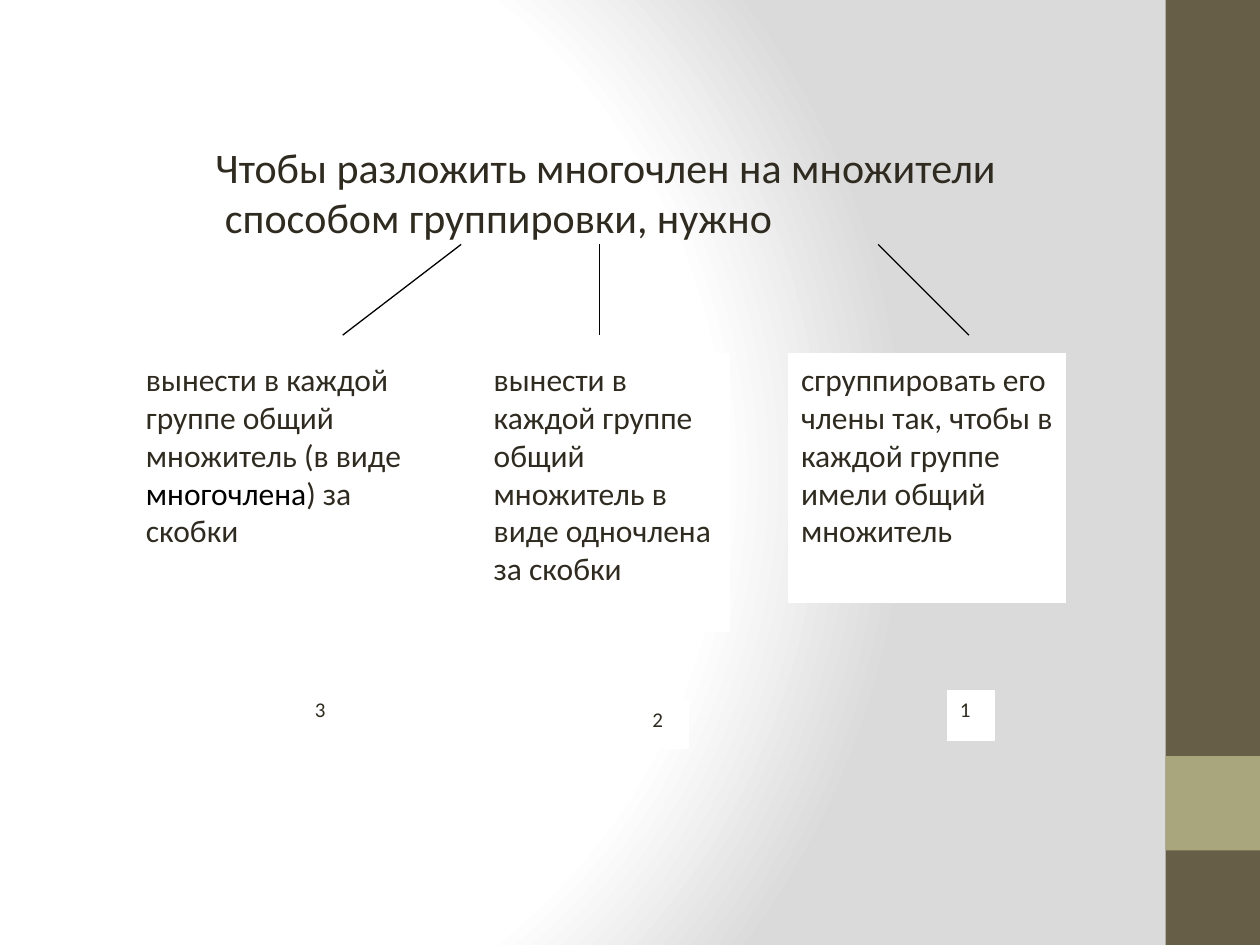
from pptx import Presentation
from pptx.dml.color import RGBColor
from pptx.enum.shapes import MSO_CONNECTOR, MSO_SHAPE
from pptx.enum.text import MSO_ANCHOR, MSO_AUTO_SIZE, PP_ALIGN
from pptx.oxml import parse_xml
from pptx.oxml.ns import nsdecls
from pptx.oxml.xmlchemy import OxmlElement
from pptx.util import Inches, Pt

INK, BLACK, WHITE = "2F2B20", "000000", "FFFFFF"
BROWN, OLIVE, GREY = "675E47", "A9A57C", "DADADA"
BAND_LEFT, BAND_WIDTH = 9.25, 0.75
STEP_TOP = 2.81
BRANCH_TOP, BRANCH_BOTTOM = 1.94, 2.66

HEADING = ["Чтобы разложить многочлен на множители",
           " способом группировки, нужно"]

# Each step: box (left, width, height), number box (left, top, width, height),
# number, text pieces with their colours.
STEPS = [
    ((1.06, 2.28, 2.28), (2.4, 5.48, 0.38, 0.38), "3",
     [("вынести в каждой группе общий множитель (в виде ", INK),
      ("многочлена", BLACK), (") за скобки", INK)]),
    ((3.82, 1.97, 2.2), (5.08, 5.56, 0.38, 0.38), "2",
     [("вынести в каждой группе общий множитель в виде одночлена за скобки", INK)]),
    ((6.26, 2.2, 1.97), (7.52, 5.48, 0.37, 0.4), "1",
     [("сгруппировать его члены так, чтобы в каждой группе имели общий множитель", INK)]),
]
BRANCHES = [(3.66, 2.72), (4.76, 4.76), (6.97, 7.69)]


def color(hex_code):
    return RGBColor.from_string(hex_code)


def style_run(run, size, ink=INK):
    run.font.name = "Calibri"
    run.font.size = Pt(size)
    run.font.color.rgb = color(ink)


def set_background(slide):
    """White glow from the left fading to grey on the right."""
    stops = "".join(
        f'<a:gs pos="{share * 1000}"><a:srgbClr val="{tone}"/></a:gs>'
        for share, tone in [(0, WHITE), (75, WHITE), (100, GREY)])
    background = parse_xml(
        f'<p:bg {nsdecls("p", "a")}><p:bgPr><a:gradFill rotWithShape="1">'
        f'<a:gsLst>{stops}</a:gsLst><a:path path="circle">'
        '<a:fillToRect l="20000" t="50000" r="100000" b="50000"/></a:path>'
        '</a:gradFill><a:effectLst/></p:bgPr></p:bg>')
    slide.element.cSld.insert(0, background)


def add_box(slide, left, top, width, height, fill, outline=None):
    box = slide.shapes.add_shape(MSO_SHAPE.RECTANGLE, Inches(left), Inches(top),
                                 Inches(width), Inches(height))
    box.shadow.inherit = False
    box.fill.solid()
    box.fill.fore_color.rgb = color(fill)
    if outline:
        box.line.color.rgb = color(outline)
        box.line.width = Pt(0.75)
    else:
        box.line.fill.background()
    return box


def add_text_box(slide, place, pieces, size):
    frame = add_box(slide, *place, WHITE, WHITE).text_frame
    frame.word_wrap = True
    frame.vertical_anchor = MSO_ANCHOR.TOP
    paragraph = frame.paragraphs[0]
    paragraph.alignment = PP_ALIGN.LEFT
    for text, ink in pieces:
        run = paragraph.add_run()
        run.text = text
        style_run(run, size, ink)


def add_branch(slide, start, end):
    branch = slide.shapes.add_connector(
        MSO_CONNECTOR.STRAIGHT, Inches(start), Inches(BRANCH_TOP),
        Inches(end), Inches(BRANCH_BOTTOM))
    branch.line.color.rgb = color(BLACK)
    branch.line.width = Pt(0.75)
    branch._element.spPr.append(OxmlElement("a:effectLst"))


def set_heading(slide):
    heading = slide.shapes.title
    heading.left, heading.top = Inches(1.61), Inches(1.07)
    heading.width, heading.height = Inches(6.94), Inches(0.9)
    frame = heading.text_frame
    frame.text = "\n".join(HEADING)
    frame.word_wrap = False
    frame.auto_size = MSO_AUTO_SIZE.SHAPE_TO_FIT_TEXT
    frame.vertical_anchor = MSO_ANCHOR.MIDDLE
    for paragraph in frame.paragraphs:
        paragraph.alignment = PP_ALIGN.LEFT
        style_run(paragraph.runs[0], 24)


def main():
    deck = Presentation()
    deck.slide_width, deck.slide_height = Inches(10), Inches(7.5)
    slide = deck.slides.add_slide(deck.slide_layouts[5])
    set_background(slide)
    add_box(slide, BAND_LEFT, 0, BAND_WIDTH, 7.5, BROWN)
    add_box(slide, BAND_LEFT, 6, BAND_WIDTH, BAND_WIDTH, OLIVE)
    for (left, width, height), number_place, number, pieces in STEPS:
        add_text_box(slide, (left, STEP_TOP, width, height), pieces, 18)
        add_text_box(slide, number_place, [(number, INK)], 12)
    for start, end in BRANCHES:
        add_branch(slide, start, end)
    set_heading(slide)
    deck.save("out.pptx")


if __name__ == "__main__":
    main()
